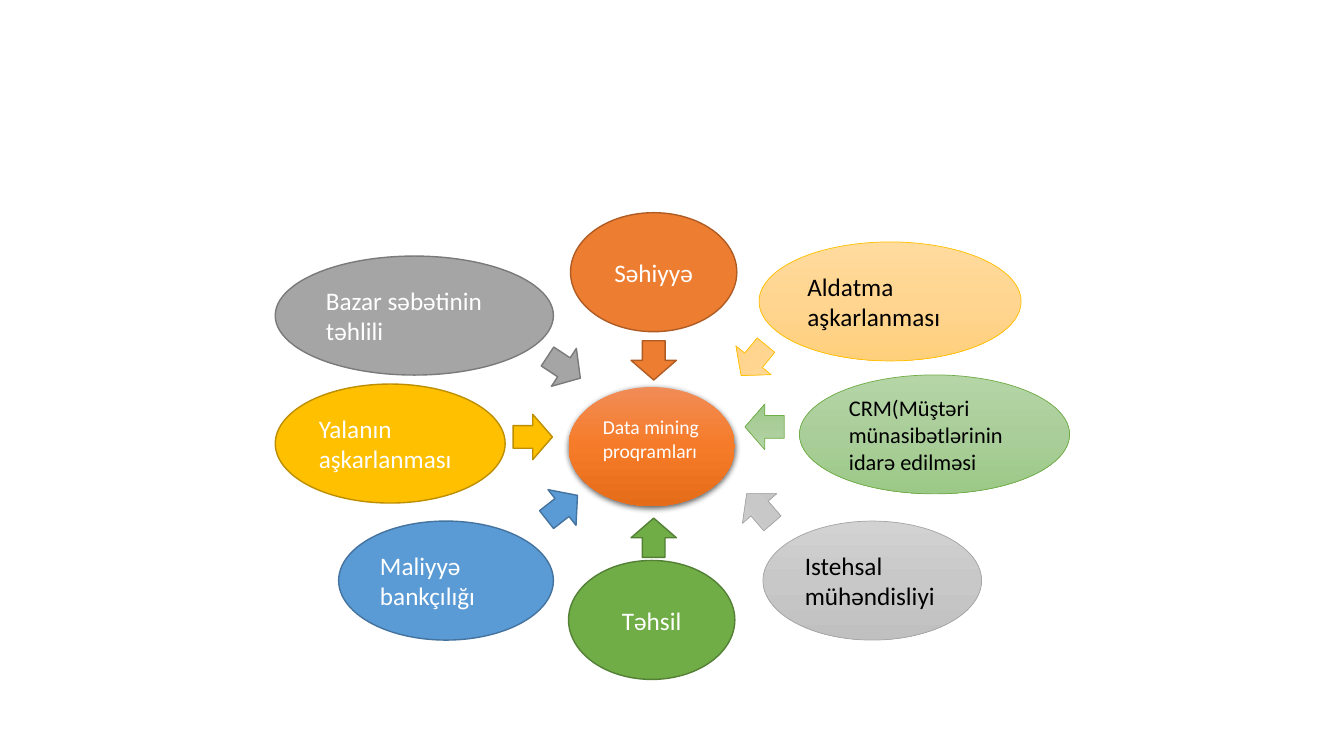
from lxml import etree
from pptx import Presentation
from pptx import util as u
from pptx.dml.color import RGBColor
from pptx.enum import shapes, text
from pptx.oxml import ns

OVAL_HEIGHT = 85
ARROW_SIZE = (28.1, 32.4)
SOLID_LINE, SOFT_LINE = 1, 0.5
WHITE, BLACK = "FFFFFF", "000000"
GOLD = ("FFDB9E", "FFD590", "FFD07C")
GREEN = ("B5D5A7", "AACE9A", "9CC987")
SILVER = ("D2D2D2", "C8C8C8", "C0C0C0")
ORANGE = ("F18C57", "F67B28", "E56C19")
LEFT, CENTER = text.PP_ALIGN.LEFT, text.PP_ALIGN.CENTER

# label, size, colour, alignment, fill, line, weight, oval (left, top, width), arrow (left, top, turn)
TOPICS = [
    ("Bazar səbətinin təhlili", 18, WHITE, LEFT, ("A5A5A5",), "7A7A7A", SOLID_LINE,
     (196.6, 182.9, 198.7), (388.8, 246.2, 33.4)),
    ("Maliyyə bankçılığı", 18, WHITE, LEFT, ("5B9BD5",), "43739E", SOLID_LINE,
     (241.9, 372.2, 153.4), (387.4, 346.3, 321.9)),
    ("Istehsal mühəndisliyi", 18, BLACK, LEFT, SILVER, "A5A5A5", SOFT_LINE,
     (545, 372.2, 156.2), (528.5, 347, 229.1)),
    ("Aldatma aşkarlanması", 18, BLACK, LEFT, GOLD, "FFC000", SOFT_LINE,
     (542.2, 172.8, 187.2), (524.2, 241.2, 129.2)),
    ("Yalanın aşkarlanması", 18, WHITE, LEFT, ("FFC000",), "BD8E00", SOLID_LINE,
     (196.6, 274.3, 164.2), (366.5, 295.9, 0)),
    ("CRM(Müştəri münasibətlərinin idarə edilməsi", 16, BLACK, LEFT, GREEN, "70AD47", SOFT_LINE,
     (571, 267.8, 193), (532.1, 288.7, 180)),
    ("Səhiyyə", 18, WHITE, CENTER, ("ED7D31",), "AF5C24", SOLID_LINE,
     (407.5, 151.9, 118.8), (452.9, 241.2, 90)),
    ("Təhsil", 18, WHITE, CENTER, ("70AD47",), "538035", SOLID_LINE,
     (406.1, 400.3, 118.8), (452.9, 367.9, 270)),
]


def color(value):
    return RGBColor.from_string(value)


class Diagram:
    """Draws styled ovals and arrows on the current page."""

    font = "Calibri"

    def __init__(self, page):
        self.page = page

    def shape(self, kind, left, top, width, height, fill, line=None, weight=0):
        box = self.page.shapes.add_shape(kind, *map(u.Pt, (left, top, width, height)))
        box.shadow.inherit = False
        if len(fill) == 1:
            box.fill.solid()
            box.fill.fore_color.rgb = color(fill[0])
        else:
            self.gradient(box, fill)
        if line:
            box.line.color.rgb = color(line)
            box.line.width = u.Pt(weight)
        else:
            box.line.fill.background()
        return box

    def gradient(self, box, fill):
        box.fill.gradient()
        box.fill.gradient_angle = 270
        stops = box._element.spPr.find(".//" + ns.qn("a:gsLst"))
        for stop in list(stops):
            stops.remove(stop)
        for index, value in enumerate(fill):
            position = str(100000 * index // (len(fill) - 1))
            stop = etree.SubElement(stops, ns.qn("a:gs"), pos=position)
            etree.SubElement(stop, ns.qn("a:srgbClr"), val=value)

    def oval(self, label, size, ink, align, place, fill, line=None, weight=0):
        left, top, width = place
        box = self.shape(shapes.MSO_SHAPE.OVAL, left, top, width, OVAL_HEIGHT, fill, line, weight)
        frame = box.text_frame
        frame.word_wrap = True
        frame.vertical_anchor = text.MSO_ANCHOR.MIDDLE
        para = frame.paragraphs[0]
        para.alignment = align
        span = para.add_run()
        span.text = label
        span.font.name = self.font
        span.font.size = u.Pt(size)
        span.font.color.rgb = color(ink)
        return box

    def arrow(self, place, fill, line, weight):
        left, top, turn = place
        box = self.shape(shapes.MSO_SHAPE.RIGHT_ARROW, left, top, *ARROW_SIZE, fill, line, weight)
        box.rotation = turn

    def drop_shadow(self, box):
        effects = box._element.spPr.find(ns.qn("a:effectLst"))
        shadow = etree.SubElement(effects, ns.qn("a:outerShdw"), blurRad=str(u.Pt(4.5)),
                                  dist=str(u.Pt(1.5)), dir="5400000", algn="ctr", rotWithShape="0")
        tint = etree.SubElement(shadow, ns.qn("a:srgbClr"), val=BLACK)
        etree.SubElement(tint, ns.qn("a:alpha"), val="63000")


def main():
    deck = Presentation()
    deck.slide_width, deck.slide_height = u.Pt(960), u.Pt(540)
    diagram = Diagram(deck.slides.add_slide(deck.slide_layouts[6]))
    for label, size, ink, align, fill, line, weight, place, _ in TOPICS:
        diagram.oval(label, size, ink, align, place, fill, line, weight)
    hub = diagram.oval("Data mining proqramları", 14, WHITE, LEFT, (406.1, 276.5, 118.8), ORANGE)
    hub.text_frame.margin_bottom = u.Pt(15)
    diagram.drop_shadow(hub)
    for *_, fill, line, weight, _, place in TOPICS:
        diagram.arrow(place, fill, line, weight)
    deck.save("out.pptx")


if __name__ == "__main__":
    main()
